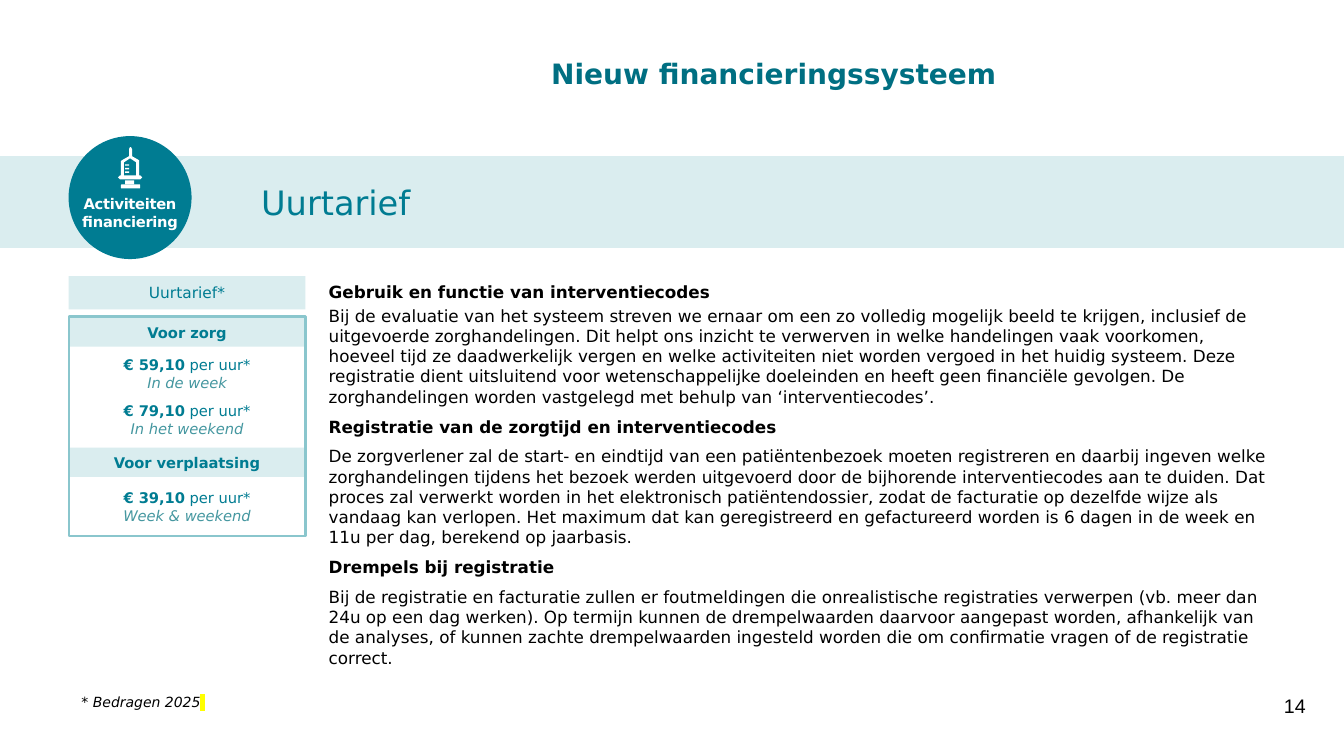
from pptx import Presentation
from pptx.dml.color import RGBColor
from pptx.enum.shapes import MSO_SHAPE
from pptx.enum.text import MSO_ANCHOR, MSO_AUTO_SIZE, PP_ALIGN
from pptx.oxml import parse_xml
from pptx.oxml.ns import nsdecls
from pptx.util import Inches, Pt

COLORS = {
    "dark": "006F82", "teal": "007C92", "soft": "4597A0", "line": "8AC6CD",
    "pale": "DAEDEF", "white": "FFFFFF", "black": "000000", "mark": "FFFF00",
}
LEFT, WIDE = 0.68, 2.35


def tint(name):
    return RGBColor.from_string(COLORS[name])


class Deck:
    def __init__(self, font):
        self.font = font
        self.file = Presentation()
        self.file.slide_width = Inches(13.33)
        self.file.slide_height = Inches(7.5)
        self.slide = self.file.slides.add_slide(self.file.slide_layouts[3])
        self.shapes = self.slide.shapes

    def style(self, para, size, color, bold=False, italic=False, font=None):
        para.font.name = font or self.font
        para.font.size = Pt(size)
        para.font.bold = bold
        para.font.italic = italic
        para.font.color.rgb = tint(color)

    def frame(self, shape, anchor, side=0.1):
        frame = shape.text_frame
        frame.word_wrap = True
        frame.auto_size = MSO_AUTO_SIZE.NONE
        frame.vertical_anchor = anchor
        frame.margin_left = frame.margin_right = Inches(side)
        frame.margin_top = frame.margin_bottom = Inches(0.05)
        return frame

    def lines(self, frame, items):
        for i, item in enumerate(items):
            para = frame.paragraphs[0] if i == 0 else frame.add_paragraph()
            yield para, item

    def holder(self, index, box, items, size, color, anchor=MSO_ANCHOR.TOP, align=PP_ALIGN.LEFT):
        shape = self.slide.placeholders[index]
        shape.left, shape.top, shape.width, shape.height = map(Inches, box)
        frame = self.frame(shape, anchor)
        for para, (text, bold, after) in self.lines(frame, items):
            para.text = text
            para.alignment = align
            para.space_before = Pt(0 if para is frame.paragraphs[0] or text == items[0][0] else 1)
            para.space_after = Pt(after)
            props = para._p.get_or_add_pPr()
            props.set("marL", "0")
            props.set("indent", "0")
            props.append(parse_xml(f"<a:buNone {nsdecls('a')}/>"))
            self.style(para, size, color, bold)

    def block(self, box, fill=None, line=None, kind=MSO_SHAPE.RECTANGLE):
        shape = self.shapes.add_shape(kind, *map(Inches, box))
        self.paint(shape, fill, line)
        return shape

    def paint(self, shape, fill, line=None):
        shape.shadow.inherit = False
        if fill:
            shape.fill.solid()
            shape.fill.fore_color.rgb = tint(fill)
        else:
            shape.fill.background()
        if line:
            shape.line.color.rgb = tint(line)
            shape.line.width = Pt(1.5)
        else:
            shape.line.fill.background()

    def label(self, shape, text, size, color, bold=False):
        para = self.frame(shape, MSO_ANCHOR.MIDDLE).paragraphs[0]
        para.text = text
        para.alignment = PP_ALIGN.CENTER
        self.style(para, size, color, bold)

    def text(self, box, text, size, color, align=PP_ALIGN.LEFT, anchor=MSO_ANCHOR.TOP, side=0.1, **look):
        shape = self.shapes.add_textbox(*map(Inches, box))
        para = self.frame(shape, anchor, side).paragraphs[0]
        para.text = text
        para.alignment = align
        self.style(para, size, color, **look)
        return para

    def rates(self, top, high, items):
        shape = self.shapes.add_textbox(*map(Inches, (LEFT, top, WIDE, high)))
        frame = self.frame(shape, MSO_ANCHOR.TOP, 0.08)
        rows = [row for price, when in items for row in ((price, " per uur*"), (when,))]
        for para, row in self.lines(frame, rows):
            para.alignment = PP_ALIGN.CENTER
            if len(row) == 1:
                para.text = row[0]
                para.space_after = Pt(8)
                self.style(para, 10.5, "soft", italic=True)
                continue
            self.style(para, 10.5, "teal")
            for text, bold in zip(row, (True, False)):
                run = para.add_run()
                run.text = text
                run.font.bold = bold

    def outline(self, fill, *rings):
        first, *rest = rings
        path = self.shapes.build_freeform(*first[0], scale=Inches(0.01))
        path.add_line_segments(first[1:], close=True)
        for ring in rest:
            path.move_to(*ring[0])
            path.add_line_segments(ring[1:], close=True)
        self.paint(path.convert_to_shape(), fill)


def main():
    deck = Deck("DejaVu Sans")
    band = deck.block((0, 1.55, 13.33, 0.91), "pale")
    deck.shapes._spTree.insert(2, band._element)

    deck.holder(0, (2.68, 0.3, 9.99, 0.85), [("Nieuw financieringssysteem", True, 0)],
                20, "dark", MSO_ANCHOR.MIDDLE, PP_ALIGN.CENTER)
    deck.holder(1, (2.49, 1.75, 9.99, 0.5), [("Uurtarief", False, 0)], 24, "teal")
    deck.holder(2, (3.16, 2.74, 9.51, 2.95), [
        ("Gebruik en functie van interventiecodes", True, 2),
        ("Bij de evaluatie van het systeem streven we ernaar om een zo volledig mogelijk beeld te krijgen, "
         "inclusief de uitgevoerde zorghandelingen. Dit helpt ons inzicht te verwerven in welke handelingen "
         "vaak voorkomen, hoeveel tijd ze daadwerkelijk vergen en welke activiteiten niet worden vergoed in "
         "het huidig systeem. Deze registratie dient uitsluitend voor wetenschappelijke doeleinden en heeft "
         "geen financiële gevolgen. De zorghandelingen worden vastgelegd met behulp van "
         "‘interventiecodes’.", False, 6),
        ("Registratie van de zorgtijd en interventiecodes", True, 6),
        ("De zorgverlener zal de start- en eindtijd van een patiëntenbezoek moeten registreren en daarbij "
         "ingeven welke zorghandelingen tijdens het bezoek werden uitgevoerd door de bijhorende "
         "interventiecodes aan te duiden. Dat proces zal verwerkt worden in het elektronisch "
         "patiëntendossier, zodat de facturatie op dezelfde wijze als vandaag kan verlopen. Het maximum dat "
         "kan geregistreerd en gefactureerd worden is 6 dagen in de week en 11u per dag, berekend op "
         "jaarbasis.", False, 6),
        ("Drempels bij registratie", True, 6),
        ("Bij de registratie en facturatie zullen er foutmeldingen die onrealistische registraties verwerpen "
         "(vb. meer dan 24u op een dag werken). Op termijn kunnen de drempelwaarden daarvoor aangepast "
         "worden, afhankelijk van de analyses, of kunnen zachte drempelwaarden ingesteld worden die om "
         "confirmatie vragen of de registratie correct.", False, 2),
    ], 12, "black")
    deck.text((9.94, 6.83, 3.11, 0.52), "14", 14, "black", PP_ALIGN.RIGHT, font="Arial")

    deck.block((LEFT, 1.35, 1.22, 1.22), "teal", kind=MSO_SHAPE.OVAL)
    badge = deck.text((0.57, 1.91, 1.44, 0.4), "Activiteiten\nfinanciering", 10.5, "white",
                      PP_ALIGN.CENTER, MSO_ANCHOR.MIDDLE, 0.04, bold=True)
    for run in badge.runs:
        run._r.get_or_add_rPr().set("spc", "-20")

    deck.block((1.2, 1.83, 0.19, 0.04), "white", kind=MSO_SHAPE.ROUNDED_RECTANGLE)
    deck.block((1.24, 1.79, 0.09, 0.04), "white")
    deck.outline(
        "white",
        [(117, 176), (119, 174), (120, 174), (120, 160), (121, 159), (128, 155), (128, 148),
         (129, 146), (130, 146), (131, 148), (131, 155), (138, 159), (138, 174), (139, 174),
         (141, 176), (139, 178), (119, 178)],
        [(123, 161), (123, 174), (135, 174), (135, 161), (129, 157)],
    )
    for i in range(3):
        deck.block((1.24, 1.63 + i * 0.035, 0.04, 0.015), "white")

    for top, text in ((4.44, "Voor verplaatsing"), (3.15, "Voor zorg")):
        deck.label(deck.block((LEFT, top, WIDE, 0.29), "pale"), text, 10.5, "teal", True)
    deck.label(deck.block((LEFT, 2.74, WIDE, 0.33), "pale"), "Uurtarief*", 11, "teal")
    deck.block((LEFT, 3.14, WIDE, 2.18), line="line")
    deck.rates(3.48, 0.95, [("€ 59,10", "In de week"), ("€ 79,10", "In het weekend")])
    deck.rates(4.8, 0.47, [("€ 39,10", "Week & weekend")])

    note = deck.text((0.71, 6.83, WIDE, 0.27), "* Bedragen 2025", 10, "black", italic=True)
    mark = note.add_run()
    mark.text = " "
    mark._r.get_or_add_rPr().append(parse_xml(
        f'<a:highlight {nsdecls("a")}><a:srgbClr val="{COLORS["mark"]}"/></a:highlight>'))

    deck.file.save("out.pptx")


if __name__ == "__main__":
    main()
